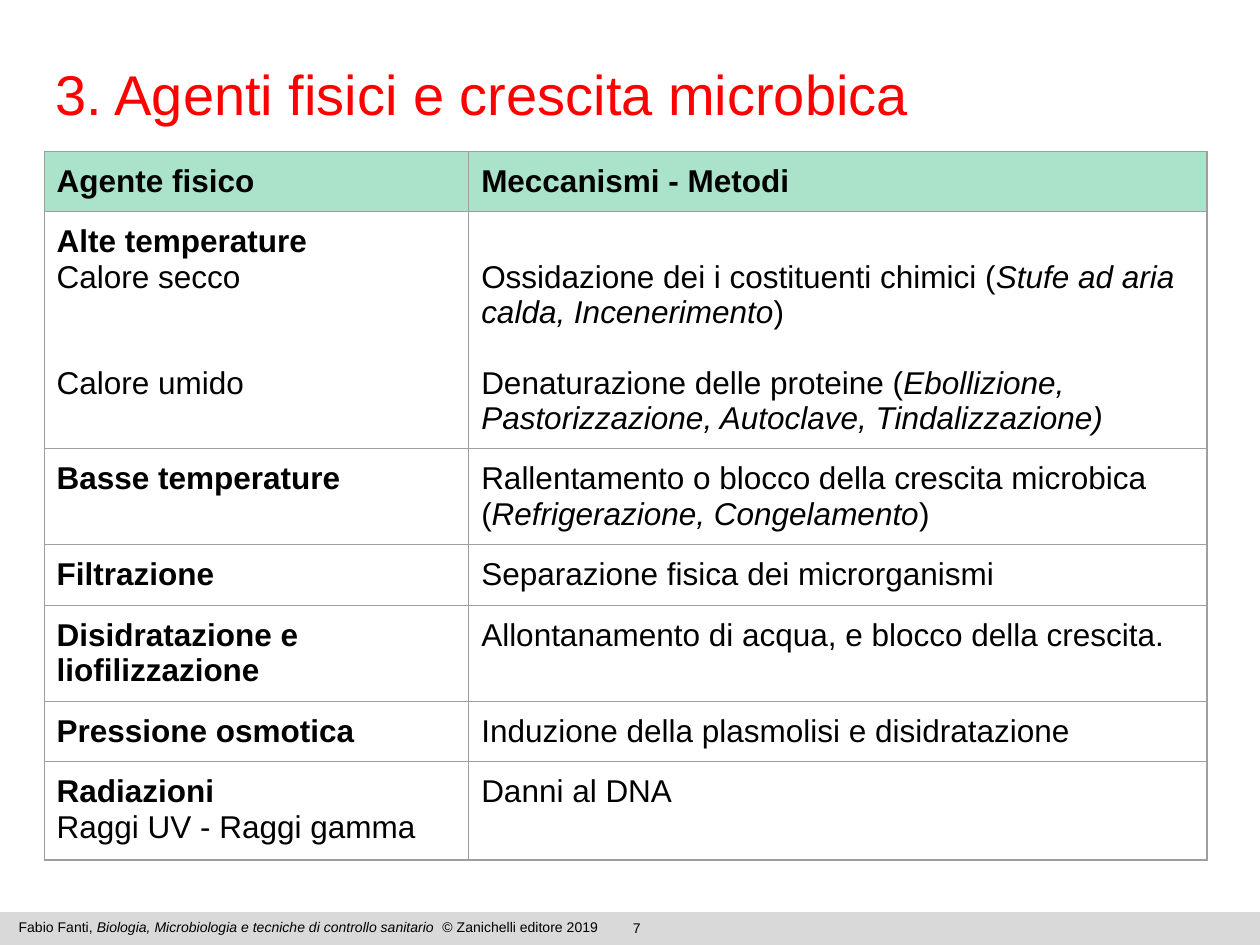
import pptx
import pptx.dml.color
import pptx.enum.shapes
import pptx.enum.text
import pptx.oxml
import pptx.oxml.ns
import pptx.util

COLORS = {"ink": "000000", "title": "FF0000", "paper": "FFFFFF",
          "header": "AAE2CA", "border": "9E9E9E", "footer": "D9D9D9"}
ALIGN = pptx.enum.text.PP_ALIGN
LINE = 20.2  # height of one table text line, in points


def color(name):
    return pptx.dml.color.RGBColor.from_string(COLORS[name])


class SlideBuilder:
    """Places elements on a grid of 100 columns by 75 rows."""

    font = "Arial"
    columns, rows = 100, 75

    def __init__(self, deck):
        self.deck = deck
        self.page = deck.slides.add_slide(deck.slide_layouts[5])

    def across(self, count):
        return round(self.deck.slide_width * count / self.columns)

    def down(self, count):
        return round(self.deck.slide_height * count / self.rows)

    def area(self, left, top, width, height):
        return self.across(left), self.down(top), self.across(width), self.down(height)

    def style_font(self, font, size, ink="ink", **extra):
        for name, value in {"name": self.font, "size": pptx.util.Pt(size), **extra}.items():
            setattr(font, name, value)
        font.color.rgb = color(ink)

    def frame(self, frame, side=0.1):
        settings = {"margin_left": side, "margin_right": side,
                    "margin_top": 0.05, "margin_bottom": 0.05}
        for name, inches in settings.items():
            setattr(frame, name, pptx.util.Inches(inches))
        frame.word_wrap = True
        frame.auto_size = pptx.enum.text.MSO_AUTO_SIZE.NONE
        frame.vertical_anchor = pptx.enum.text.MSO_ANCHOR.TOP

    def spans(self, para, parts, size):
        """Each part is (text, style); style holds b for bold, i for italic."""
        for text, style in parts:
            span = para.add_run()
            span.text = text
            self.style_font(span.font, size, bold="b" in style, italic="i" in style)

    def title(self, text, *place):
        box = self.page.shapes.title
        box.left, box.top, box.width, box.height = self.area(*place)
        box.fill.solid()
        box.fill.fore_color.rgb = color("paper")
        box.line.color.rgb = color("paper")
        box.line.width = pptx.util.Pt(0.75)
        self.frame(box.text_frame, 0.09)
        box.text_frame.text = text
        para = box.text_frame.paragraphs[0]
        para.alignment = ALIGN.LEFT
        self.style_font(para.runs[0].font, 32, "title")

    def band(self, fill, *place):
        shape = self.page.shapes.add_shape(
            pptx.enum.shapes.MSO_SHAPE.RECTANGLE, *self.area(*place))
        shape.shadow.inherit = False
        shape.fill.solid()
        shape.fill.fore_color.rgb = color(fill)
        shape.line.fill.background()

    def text(self, parts, *place, size=8, align=ALIGN.LEFT):
        box = self.page.shapes.add_textbox(*self.area(*place))
        self.frame(box.text_frame)
        para = box.text_frame.paragraphs[0]
        para.alignment = align
        self.spans(para, parts, size)

    def borders(self, cell):
        properties = cell._tc.get_or_add_tcPr()
        for index, side in enumerate(("lnL", "lnR", "lnT", "lnB")):
            properties.insert(index, pptx.oxml.parse_xml(
                f'<a:{side} {pptx.oxml.ns.nsdecls("a")} w="{pptx.util.Pt(0.75)}">'
                f'<a:solidFill><a:srgbClr val="{COLORS["border"]}"/></a:solidFill></a:{side}>'))

    def cell(self, cell, paragraphs, header):
        """Each paragraph is (lines left free above it, parts)."""
        for side in ("left", "right", "top", "bottom"):
            setattr(cell, f"margin_{side}", pptx.util.Inches(0.1))
        if header:
            cell.fill.solid()
            cell.fill.fore_color.rgb = color("header")
        else:
            cell.fill.background()
        self.borders(cell)
        for index, (gap, parts) in enumerate(paragraphs):
            if index == 0:
                para = cell.text_frame.paragraphs[0]
                cell.margin_top += pptx.util.Pt(gap * LINE)
            else:
                para = cell.text_frame.add_paragraph()
                para.space_before = pptx.util.Pt(gap * LINE)
            self.spans(para, parts, 18)

    def table(self, content, left, top, widths, heights):
        place = self.area(left, top, sum(widths), sum(heights))
        table = self.page.shapes.add_table(len(heights), len(widths), *place).table
        table.first_row = table.horz_banding = False
        for column, width in zip(table.columns, widths):
            column.width = self.across(width)
        for row, height in zip(table.rows, heights):
            row.height = self.down(height)
        for row_index, entries in enumerate(content):
            for column_index, paragraphs in enumerate(entries):
                self.cell(table.cell(row_index, column_index), paragraphs, row_index == 0)


def one(text, style=""):
    return [(0, [(text, style)])]


AGENTS = [
    (one("Agente fisico", "b"), one("Meccanismi - Metodi", "b")),
    ([(0, [("Alte temperature", "b")]),
      (0, [("Calore secco", "")]),
      (2, [("Calore umido", "")])],
     [(1, [("Ossidazione dei i costituenti chimici (", ""),
           ("Stufe ad aria calda, Incenerimento", "i"), (")", "")]),
      (1, [("Denaturazione delle proteine (", ""),
           ("Ebollizione, Pastorizzazione, Autoclave, Tindalizzazione)", "i")])]),
    (one("Basse temperature", "b"),
     [(0, [("Rallentamento o blocco della crescita microbica (", ""),
           ("Refrigerazione, Congelamento", "i"), (")", "")])]),
    (one("Filtrazione", "b"), one("Separazione fisica dei microrganismi")),
    (one("Disidratazione e liofilizzazione", "b"),
     one("Allontanamento di acqua, e blocco della crescita.")),
    (one("Pressione osmotica", "b"), one("Induzione della plasmolisi e disidratazione")),
    ([(0, [("Radiazioni", "b")]), (0, [("Raggi UV - Raggi gamma", "")])],
     one("Danni al DNA")),
]


def main():
    deck = pptx.Presentation()
    deck.slide_width = pptx.util.Inches(10)
    deck.slide_height = pptx.util.Inches(7.5)
    slide = SlideBuilder(deck)

    # Footer band, page number and credit
    slide.band("footer", 0, 72.4, 100, 2.6)
    slide.text([("7", "")], 39.4, 72.5, 22.3, 1.7, align=ALIGN.CENTER)
    slide.text([("Fabio Fanti, ", ""),
                ("Biologia, Microbiologia e tecniche di controllo sanitario", "i"),
                ("  © Zanichelli editore 2019", "")], 0.5, 72.4, 50.4, 2.4)

    # Title and table of physical agents
    slide.title("3. Agenti fisici e crescita microbica", 3.5, 4.2, 96.5, 9.7)
    single, double = 4.76, 7.62
    slide.table(AGENTS, 3.5, 12, (33.7, 58.6),
                (single, 18.8, double, single, double, single, 7.8))

    deck.save("out.pptx")


if __name__ == "__main__":
    main()
